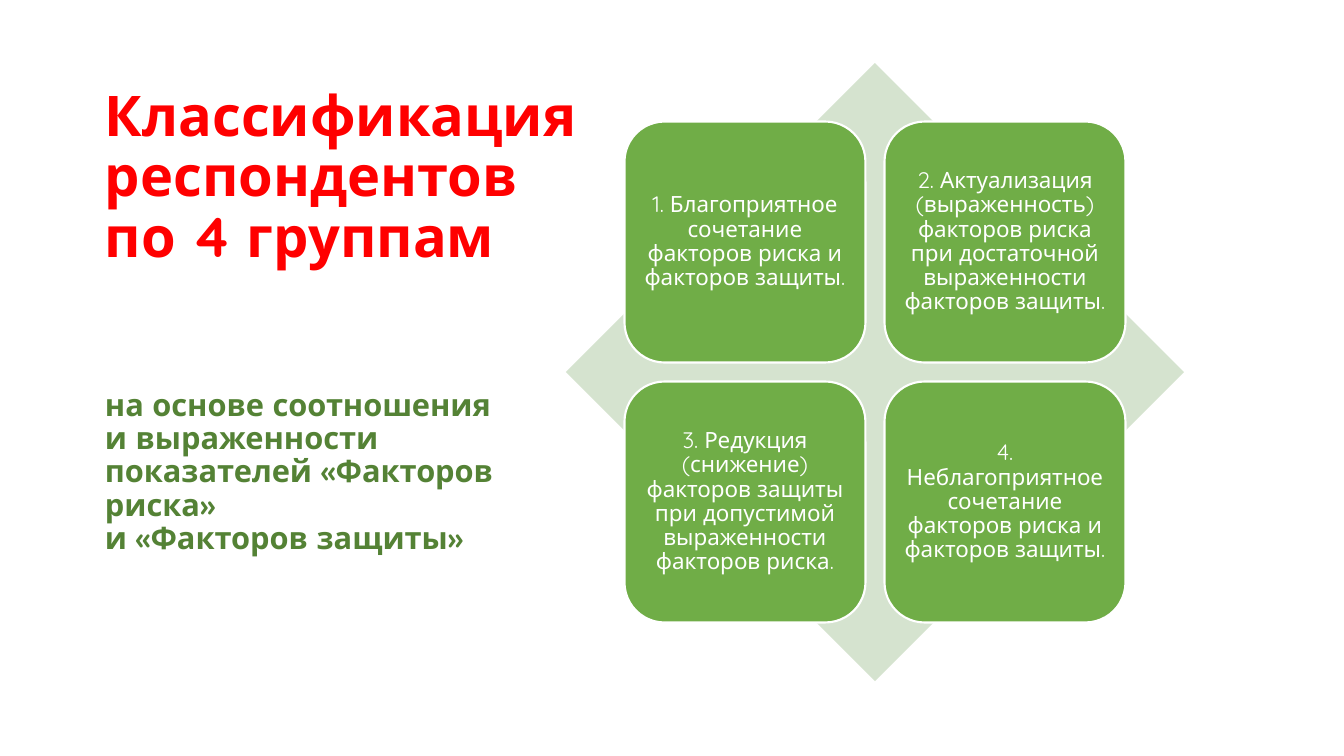
from pptx import Presentation
from pptx.dml.color import RGBColor
from pptx.enum.shapes import MSO_SHAPE
from pptx.enum.text import MSO_ANCHOR, PP_ALIGN
from pptx.util import Pt

# Content: "\v" is a line break inside a paragraph
HEADING = [
    # text, size, colour, space before (pt)
    ("Классификация респондентов\vпо 4 группам", 40, "red", 0),
    ("на основе соотношения\vи выраженности показателей «Факторов риска»\vи «Факторов защиты»",
     22, "dark_green", 86),
]
GROUPS = [
    ["1. Благоприятное сочетание факторов риска и факторов защиты.",
     "2. Актуализация (выраженность) факторов риска при достаточной выраженности факторов защиты."],
    ["3. Редукция (снижение) факторов защиты при допустимой выраженности факторов риска.",
     "4. Неблагоприятное сочетание факторов риска и факторов защиты."],
]
COLORS = {"red": "FF0000", "dark_green": "548235", "green": "70AD47",
          "pale_green": "D5E3CF", "white": "FFFFFF"}
FONT = "Quicksand"

# Layout in px
SLIDE = (1344, 756)
HEADING_BOX = (95, 86, 508, 472)
DIAMOND_LEFT, DIAMOND_TOP, DIAMOND_SIZE = 566, 63, 618
CARD, GAP, INSET = 241, 19, 7
EMU_PER_PX = 914400 / 100.8


def px(*lengths):
    return [round(length * EMU_PER_PX) for length in lengths]


def color(name):
    return RGBColor.from_string(COLORS[name])


def write(paragraph, text, size, color_name, bold=False):
    paragraph.text = text
    paragraph.line_spacing = 0.9
    for run in paragraph.runs:
        run.font.name = FONT
        run.font.size = Pt(size)
        run.font.bold = bold
        run.font.color.rgb = color(color_name)


def add_filled(slide, preset, box, fill):
    shape = slide.shapes.add_shape(preset, *px(*box))
    shape.shadow.inherit = False
    shape.fill.solid()
    shape.fill.fore_color.rgb = color(fill)
    return shape


def add_heading(slide):
    frame = slide.shapes.add_textbox(*px(*HEADING_BOX)).text_frame
    frame.word_wrap = True
    frame.vertical_anchor = MSO_ANCHOR.MIDDLE
    for i, (text, size, color_name, before) in enumerate(HEADING):
        paragraph = frame.add_paragraph() if i else frame.paragraphs[0]
        write(paragraph, text, size, color_name, bold=True)
        if before:
            paragraph.space_before = Pt(before)


def add_card(slide, left, top, text):
    card = add_filled(slide, MSO_SHAPE.ROUNDED_RECTANGLE, (left, top, CARD, CARD), "green")
    card.line.color.rgb = color("white")
    card.line.width = Pt(1.5)
    frame = card.text_frame
    frame.word_wrap = True
    frame.vertical_anchor = MSO_ANCHOR.MIDDLE
    [inset] = px(INSET)
    frame.margin_left = frame.margin_right = inset
    frame.margin_top = frame.margin_bottom = inset
    write(frame.paragraphs[0], text, 16, "white")
    frame.paragraphs[0].alignment = PP_ALIGN.CENTER


def add_matrix(slide):
    diamond = add_filled(slide, MSO_SHAPE.DIAMOND,
                         (DIAMOND_LEFT, DIAMOND_TOP, DIAMOND_SIZE, DIAMOND_SIZE), "pale_green")
    diamond.line.fill.background()
    # The 2 x 2 cards are centred on the diamond
    margin = (DIAMOND_SIZE - 2 * CARD - GAP) / 2
    for row, texts in enumerate(GROUPS):
        for column, text in enumerate(texts):
            add_card(slide,
                     DIAMOND_LEFT + margin + column * (CARD + GAP),
                     DIAMOND_TOP + margin + row * (CARD + GAP),
                     text)


def main():
    deck = Presentation()
    deck.slide_width, deck.slide_height = px(*SLIDE)
    slide = deck.slides.add_slide(deck.slide_layouts[6])
    add_heading(slide)
    add_matrix(slide)
    deck.save("out.pptx")


if __name__ == "__main__":
    main()
